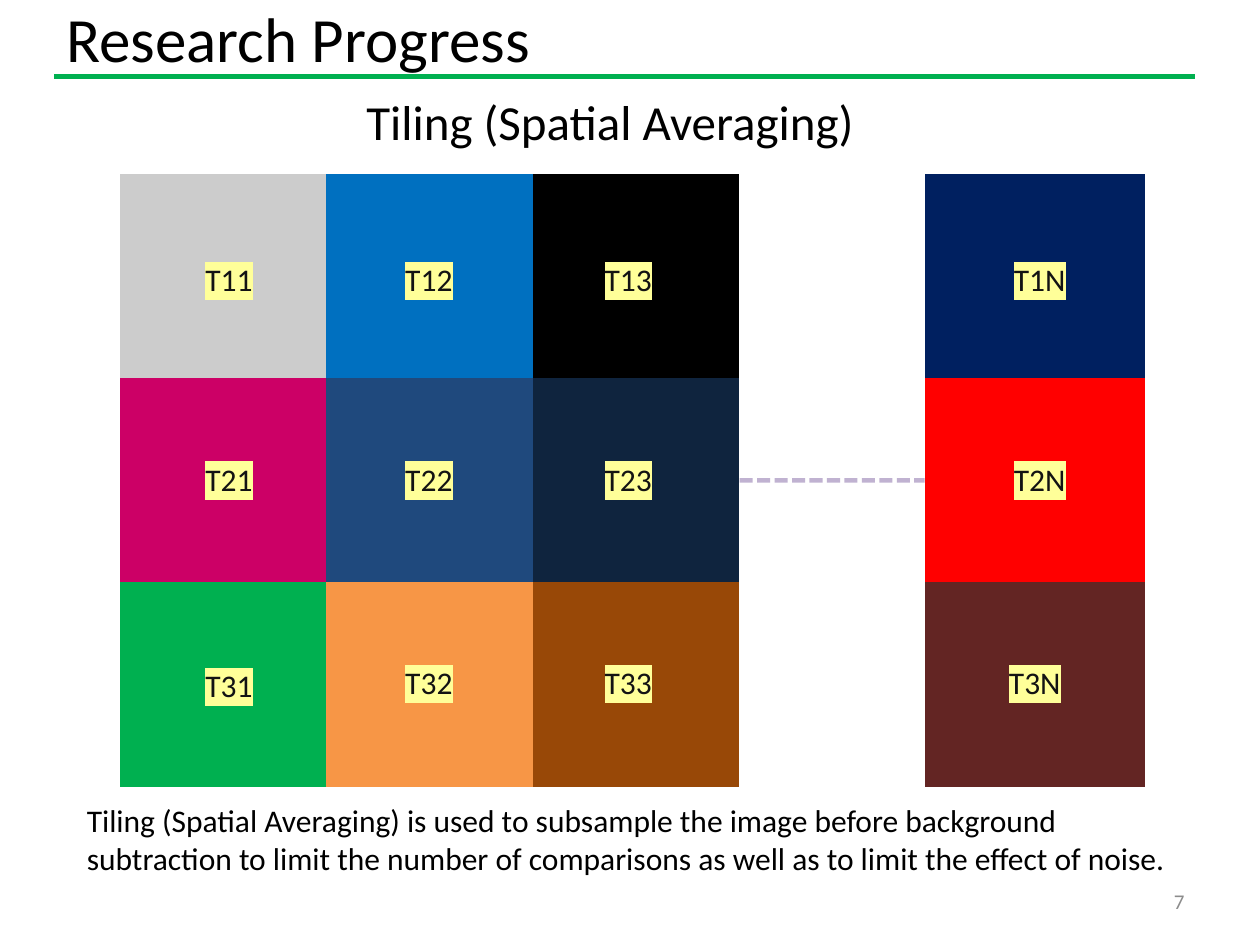
import pptx
import pptx.util
import pptx.dml.color
import pptx.enum.dml
import pptx.enum.shapes
import pptx.enum.text
import pptx.oxml.ns
import lxml.etree

Cm = pptx.util.Cm
Pt = pptx.util.Pt
ALIGN = pptx.enum.text.PP_ALIGN
ANCHOR = pptx.enum.text.MSO_ANCHOR
qn = pptx.oxml.ns.qn

COLORS = {
    "ink": "000000", "label": "131313", "mark": "FFFF99",
    "page": "8C8C8C", "rule": "00B050", "dash": "B3A2C7",
}
# Tile colours by row: the first three columns, then the last column
TILES = [
    ["CCCCCC", "0070C0", "000000"],
    ["CC0066", "1F497D", "0F243E"],
    ["00B050", "F79646", "984807"],
]
LAST = [["002060"], ["FF0000"], ["632523"]]
SPAN = 4  # cells along each side of a tile
PLAIN = "{2D5ABB26-0587-4C30-8999-92F81FD0307C}"  # no style, no grid


def rgb(code):
    return pptx.dml.color.RGBColor.from_string(code)


def write(slide, box, text, size, color="ink", align=ALIGN.LEFT,
          anchor=ANCHOR.TOP):
    shape = slide.shapes.add_textbox(*[Cm(v) for v in box])
    frame = shape.text_frame
    frame.text = text
    frame.word_wrap = True
    frame.vertical_anchor = anchor
    para = frame.paragraphs[0]
    para.alignment = align
    run = para.runs[0]
    run.font.name = "Calibri"
    run.font.size = Pt(size)
    run.font.color.rgb = rgb(COLORS[color])
    return run


def mark(run, code):
    """Highlight a run; the element belongs right after its fill."""
    light = lxml.etree.Element(qn("a:highlight"))
    lxml.etree.SubElement(light, qn("a:srgbClr"), val=code)
    run.font._element.find(qn("a:solidFill")).addnext(light)


def rule(slide, left, right, top, color, width):
    line = slide.shapes.add_connector(
        pptx.enum.shapes.MSO_CONNECTOR.STRAIGHT,
        Cm(left), Cm(top), Cm(right), Cm(top))
    line.line.color.rgb = rgb(COLORS[color])
    line.line.width = Pt(width)
    lxml.etree.SubElement(line._element.spPr, qn("a:effectLst"))
    return line


def header(slide, left, top, width):
    rule(slide, left, left + 23, top + 1.42, "rule", 3)
    write(slide, (left, top, width, 1.25), "Research Progress", 36,
          anchor=ANCHOR.MIDDLE)
    write(slide, (left + 0.41, top + 1.6, 21.59, 1.45),
          "Tiling (Spatial Averaging)", 28, align=ALIGN.CENTER)


def grid(slide, left, top, width, height, tiles):
    rows, cols = len(tiles) * SPAN, len(tiles[0]) * SPAN
    table = slide.shapes.add_table(
        rows, cols, Cm(left), Cm(top), Cm(width), Cm(height)).table
    table.first_row = table.horz_banding = False
    table._tbl.tblPr.find(qn("a:tableStyleId")).text = PLAIN
    for r in range(rows):
        for c in range(cols):
            fill = table.cell(r, c).fill
            fill.solid()
            fill.fore_color.rgb = rgb(tiles[r // SPAN][c // SPAN])


def labels(slide, left, top):
    steps = {"1": 1.48, "2": 5.51, "3": 9.53, "N": 17.78}
    drops = {"1": 1.62, "2": 5.64, "3": 9.75}
    shifts = {"T31": (0, 0.05), "T3N": (-0.1, 0)}
    for row, y in drops.items():
        for col, x in steps.items():
            name = "T" + row + col
            dx, dy = shifts.get(name, (0, 0))
            box = (left + x + dx, top + y + dy, 1.9, 1.03)
            mark(write(slide, box, name, 18, "label"), COLORS["mark"])


def tiling(slide, left, top, height):
    grid(slide, left, top, 12.5, height, TILES)
    grid(slide, left + 16.23, top, 4.45, height, LAST)
    # Dashed link for the columns left out
    link = rule(slide, left + 12.5, left + 16.23, top + height / 2,
                "dash", 2.5)
    link.line.dash_style = pptx.enum.dml.MSO_LINE.SQUARE_DOT
    tint = link._element.spPr.find(".//" + qn("a:srgbClr"))
    lxml.etree.SubElement(tint, qn("a:alpha"), val="82000")
    labels(slide, left, top)


def footer(slide, left, top, width):
    write(slide, (left, top, width, 1.8),
          "Tiling (Spatial Averaging) is used to subsample the image before "
          "background subtraction to limit the number of comparisons as well "
          "as to limit the effect of noise.", 18)
    write(slide, (left + 16.71, top + 1.62, 5.92, 1.02), "7", 12, "page",
          ALIGN.RIGHT, ANCHOR.MIDDLE)


def main():
    deck = pptx.Presentation()
    deck.slide_width, deck.slide_height = Cm(25.4), Cm(19.05)
    slide = deck.slides.add_slide(deck.slide_layouts[6])
    header(slide, 1.09, 0.13, 22.86)
    footer(slide, 1.5, 16.03, 23.01)
    tiling(slide, 2.41, 3.5, 12.37)
    deck.save("out.pptx")


if __name__ == "__main__":
    main()
